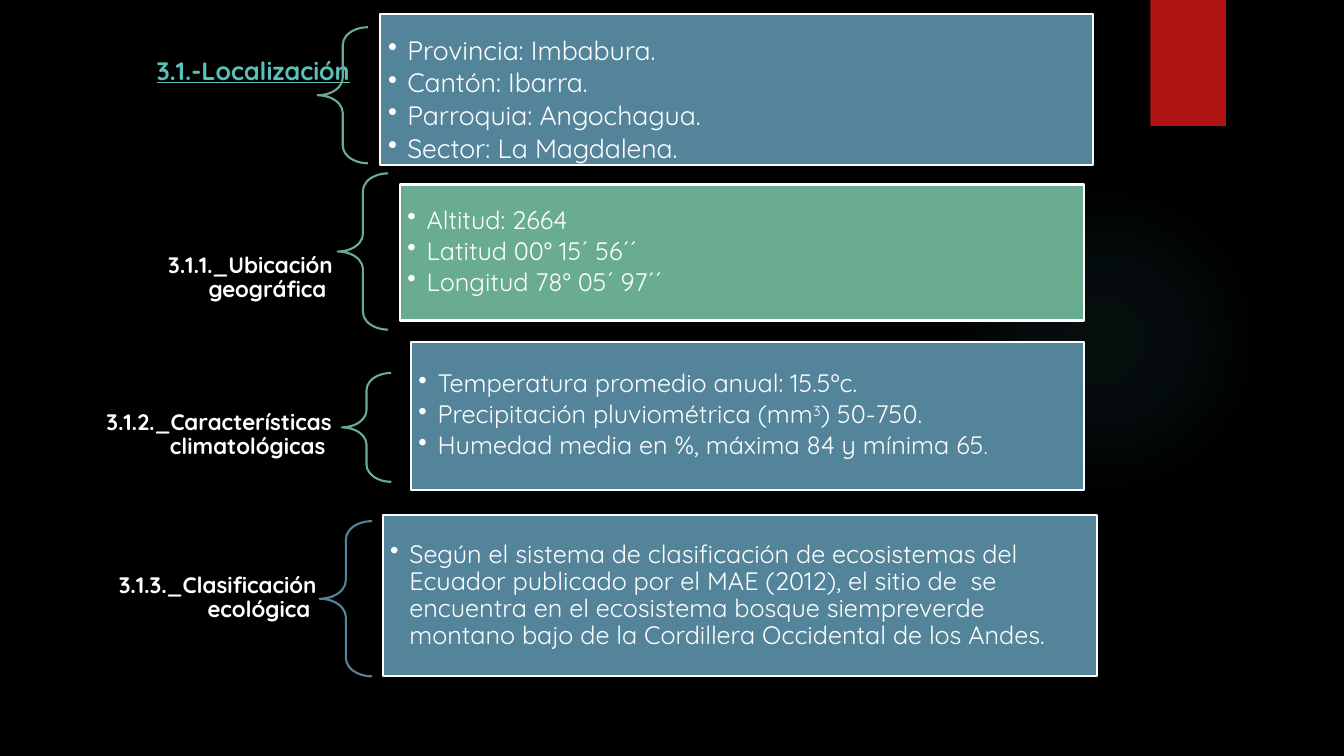
import lxml.etree
import pptx
import pptx.dml.color
import pptx.enum.shapes
import pptx.enum.text
import pptx.oxml.ns
import pptx.util

RGB = pptx.dml.color.RGBColor
SHAPE = pptx.enum.shapes.MSO_SHAPE
ALIGN = pptx.enum.text.PP_ALIGN

BLACK = RGB(0x00, 0x00, 0x00)
WHITE = RGB(0xFF, 0xFF, 0xFF)
RED = RGB(0xB0, 0x15, 0x13)
TEAL = RGB(0x58, 0xC1, 0xBA)
GLOW = RGB(0x50, 0xB9, 0xC1)
GREEN = RGB(0x6A, 0xAC, 0x90)
BLUE = RGB(0x54, 0x84, 0x9A)

EMU_PER_PX = 9144  # 100 px to the inch


def px(length):
    return pptx.util.Emu(length * EMU_PER_PX)


def add_xml(parent, tag, **attributes):
    child = lxml.etree.SubElement(parent, pptx.oxml.ns.qn(tag))
    for name, value in attributes.items():
        child.set(name, str(value))
    return child


class Board:
    """Slide with the shared font and line style."""

    font = "Quicksand"
    line_width = pptx.util.Pt(1.5)

    def __init__(self, deck):
        self.slide = deck.slides.add_slide(deck.slide_layouts[6])
        self.slide.background.fill.solid()
        self.slide.background.fill.fore_color.rgb = BLACK

    def shape(self, kind, box, fill=None, line=None):
        item = self.slide.shapes.add_shape(kind, *map(px, box))
        item.shadow.inherit = False
        if fill is None:
            item.fill.background()
        else:
            item.fill.solid()
            item.fill.fore_color.rgb = fill
        if line is None:
            item.line.fill.background()
        else:
            item.line.color.rgb = line
            item.line.width = self.line_width
        return item

    def glow(self, box, stops):
        """Faint radial light; stops are (position %, opacity %)."""
        disc = self.shape(SHAPE.OVAL, box)
        properties = disc._element.spPr
        gradient = add_xml(properties, "a:gradFill", rotWithShape=1)
        stop_list = add_xml(gradient, "a:gsLst")
        for position, opacity in stops:
            stop = add_xml(stop_list, "a:gs", pos=position * 1000)
            color = add_xml(stop, "a:srgbClr", val=GLOW)
            add_xml(color, "a:alpha", val=opacity * 1000)
        center = add_xml(gradient, "a:path", path="circle")
        add_xml(center, "a:fillToRect", l=50000, t=50000, r=50000, b=50000)
        no_fill = properties.find(pptx.oxml.ns.qn("a:noFill"))
        properties.replace(no_fill, gradient)

    def brace(self, box, color):
        brace = self.shape(SHAPE.LEFT_BRACE, box, line=color)
        brace.adjustments[0] = 0.35
        brace.adjustments[1] = 0.5

    def text(self, box, paragraphs, *, size, insets, color=WHITE, bold=False,
             underline=False, align=ALIGN.LEFT, after=0.15, bullet=False):
        """A paragraph is a list of (text, size, baseline) runs or a string."""
        frame = self.slide.shapes.add_textbox(*map(px, box)).text_frame
        frame.word_wrap = True
        frame.vertical_anchor = pptx.enum.text.MSO_ANCHOR.MIDDLE
        frame.margin_left = frame.margin_right = px(insets[0])
        frame.margin_top = frame.margin_bottom = px(insets[1])
        for index, content in enumerate(paragraphs):
            paragraph = frame.add_paragraph() if index else frame.paragraphs[0]
            if bullet:
                paragraph.level = 1
                properties = paragraph._p.get_or_add_pPr()
                properties.set("marL", str(px(19)))
                properties.set("indent", str(px(-19)))
                add_xml(properties, "a:buChar", char="•")
            paragraph.alignment = align
            paragraph.line_spacing = 0.9
            paragraph.space_after = pptx.util.Pt(round(size * after, 1))
            runs = [(content, size, 0)] if isinstance(content, str) else content
            for words, run_size, baseline in runs:
                run = paragraph.add_run()
                run.text = words
                run.font.name = self.font
                run.font.size = pptx.util.Pt(run_size)
                run.font.color.rgb = color
                run.font.bold = bold
                run.font.underline = underline
                if baseline:
                    run.font._element.set("baseline", str(baseline * 1000))

    def label(self, box, words, size=16, insets=(12, 4), **style):
        self.text(box, [words], size=size, insets=insets, bold=True,
                  align=ALIGN.RIGHT, after=0.35, **style)

    def panel(self, box, fill, facts, size=18, inset=7, drop=0):
        self.shape(SHAPE.RECTANGLE, box, fill, WHITE)
        left, top, width, height = box
        self.text((left, top + drop, width, height), facts, size=size,
                  insets=(inset, inset), bullet=True)


def main():
    deck = pptx.Presentation()
    deck.slide_width, deck.slide_height = px(1333), px(750)
    board = Board(deck)

    # Background decoration
    board.glow((941, 183, 308, 308), [(0, 7), (36, 6), (69, 0)])
    board.shape(SHAPE.RECTANGLE, (1141, 0, 75, 125), RED)

    # Location
    board.label((78, 27, 283, 89), "3.1.-Localización", size=18,
                insets=(14, 5), color=TEAL, underline=True)
    board.brace((315, 27, 50, 135), GREEN)
    board.panel((377, 14, 707, 150), BLUE, [
        "Provincia: Imbabura.",
        "Cantón: Ibarra.",
        "Parroquia: Angochagua.",
        "Sector: La Magdalena.",
    ], size=19, inset=8, drop=11)

    # Geographic position
    board.label((93, 137, 249, 278), "3.1.1._Ubicación geográfica ")
    board.brace((335, 172, 50, 155), GREEN)
    board.panel((397, 183, 678, 135), GREEN, [
        "Altitud: 2664",
        "Latitud 00° 15´ 56´´",
        "Longitud 78° 05´ 97´´",
    ])

    # Climate
    board.label((80, 360, 261, 144), "3.1.2._Características climatológicas ")
    board.brace((339, 370, 49, 108), GREEN)
    board.panel((408, 339, 667, 147), BLUE, [
        "Temperatura promedio anual: 15.5ºc.",
        [("Precipitación pluviométrica (mm", 18, 0), ("3", 18, 30),
         (") 50-750.", 18, 0)],
        [("Humedad media en %, máxima 84 y mínima 65", 18, 0), (".", 15, 0)],
    ])

    # Ecological classification
    board.label((75, 541, 251, 105), "3.1.3._Clasificación ecológica ")
    board.brace((317, 517, 52, 154), BLUE)
    board.panel((380, 511, 708, 160), BLUE, [
        "Según el sistema de clasificación de ecosistemas del Ecuador "
        "publicado por el MAE (2012), el sitio de  se encuentra en el "
        "ecosistema bosque siempreverde montano bajo de la Cordillera "
        "Occidental de los Andes.",
    ])

    deck.save("out.pptx")


if __name__ == "__main__":
    main()
